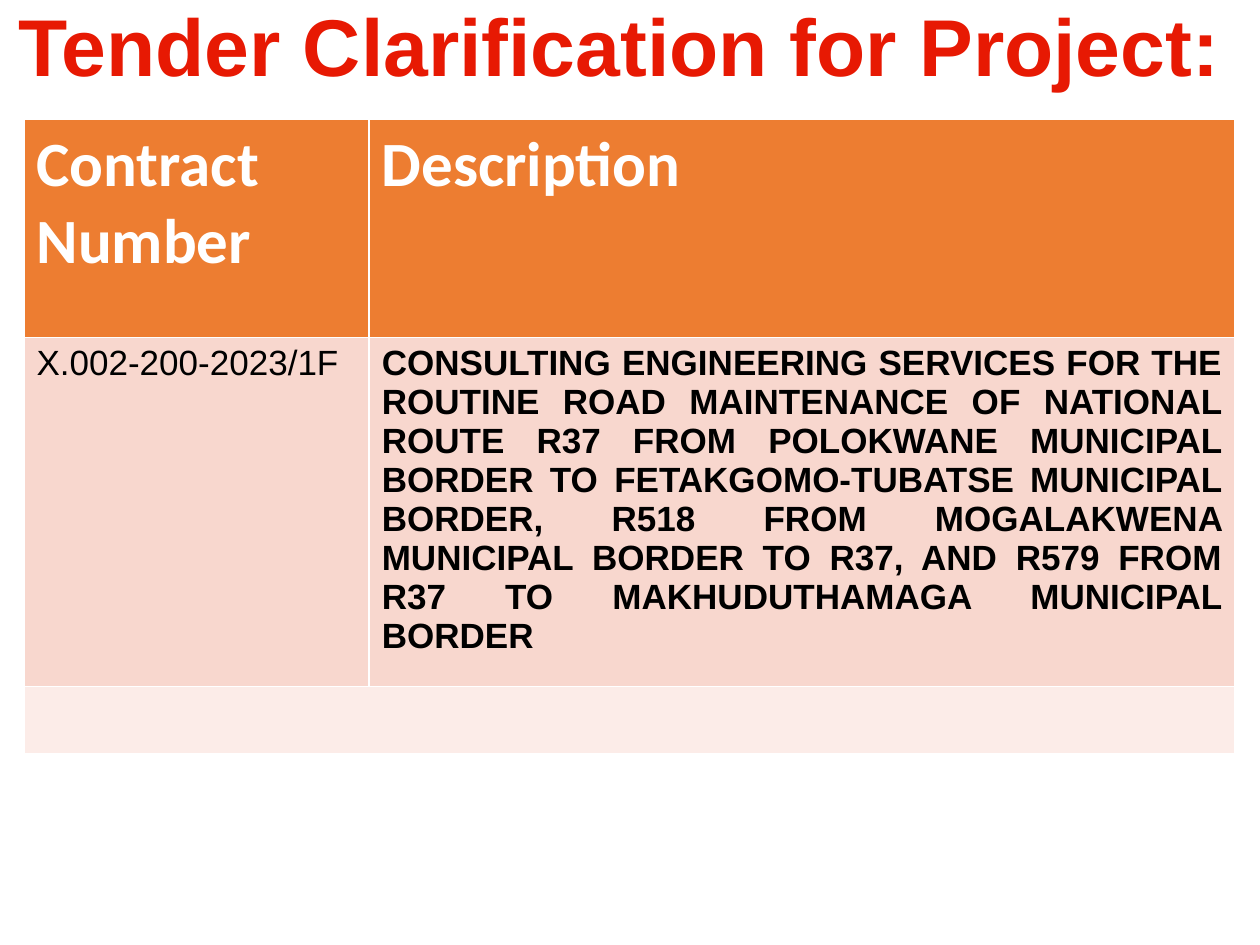
from pptx import Presentation
from pptx.dml.color import RGBColor
from pptx.enum.text import MSO_ANCHOR as Anchor, MSO_AUTO_SIZE as AutoSize, PP_ALIGN as Align
from pptx.util import Inches, Pt

COLORS = {
    "title": "E71903", "header": "ED7D31", "header_text": "FFFFFF",
    "contract": "F8D7CE", "contract_text": "000000", "footer": "FCECE8",
}
TITLE = "Tender Clarification for Project: "
HEADER = ("Contract Number", "Description")
CONTRACT = (
    "X.002-200-2023/1F",
    "CONSULTING ENGINEERING SERVICES FOR THE ROUTINE ROAD MAINTENANCE OF NATIONAL "
    "ROUTE R37 FROM POLOKWANE MUNICIPAL BORDER TO FETAKGOMO-TUBATSE MUNICIPAL BORDER, "
    "R518 FROM MOGALAKWENA MUNICIPAL BORDER TO R37, AND R579 FROM R37 TO "
    "MAKHUDUTHAMAGA MUNICIPAL BORDER",
)
ROWS = [
    (HEADER, "header", 1.73),
    (CONTRACT, "contract", 2.77),
    (("", ""), "footer", 0.53),
]
COLUMN_WIDTHS = (2.74, 6.87)
FONTS = {
    "title": {"name": "Arial", "size": Pt(46), "bold": True},
    "header": {"name": "Calibri", "size": Pt(36), "bold": True},
    "contract": {"name": "Arial", "size": Pt(20), "bold": False},
}


def style(paragraph, role, color, **changes):
    font = paragraph.runs[0].font
    for attribute, value in {**FONTS[role], **changes}.items():
        setattr(font, attribute, value)
    font.color.rgb = RGBColor.from_string(COLORS[color])


def add_title(slide):
    title = slide.shapes.title
    place = {"left": -0.19, "top": 0, "width": 10.38, "height": 0.8}
    for attribute, value in place.items():
        setattr(title, attribute, Inches(value))
    frame = title.text_frame
    layout = {"text": TITLE, "word_wrap": False, "auto_size": AutoSize.NONE,
              "vertical_anchor": Anchor.MIDDLE}
    for attribute, value in layout.items():
        setattr(frame, attribute, value)
    heading = frame.paragraphs[0]
    heading.alignment, heading.line_spacing = Align.CENTER, 0.9
    style(heading, "title", "title")


def add_contract_table(slide):
    heights = [height for _, _, height in ROWS]
    table = slide.shapes.add_table(
        len(ROWS), len(COLUMN_WIDTHS), Inches(0.19), Inches(0.95),
        Inches(sum(COLUMN_WIDTHS)), Inches(sum(heights))).table
    for column, width in zip(table.columns, COLUMN_WIDTHS):
        column.width = Inches(width)
    for row, (texts, role, height) in zip(table.rows, ROWS):
        row.height = Inches(height)
        for cell, text in zip(row.cells, texts):
            cell.fill.solid()
            cell.fill.fore_color.rgb = RGBColor.from_string(COLORS[role])
            if text:
                cell.text = text
                style(cell.text_frame.paragraphs[0], role, f"{role}_text")
    table.cell(2, 0).merge(table.cell(2, 1))
    description = table.cell(1, 1).text_frame.paragraphs[0]
    description.alignment = Align.JUSTIFY
    style(description, "contract", "contract_text", bold=True)


def main():
    deck = Presentation()
    deck.slide_width, deck.slide_height = Inches(10), Inches(7.5)
    slide = deck.slides.add_slide(deck.slide_layouts.get_by_name("Title Only"))
    add_title(slide)
    add_contract_table(slide)
    deck.save("out.pptx")


if __name__ == "__main__":
    main()
